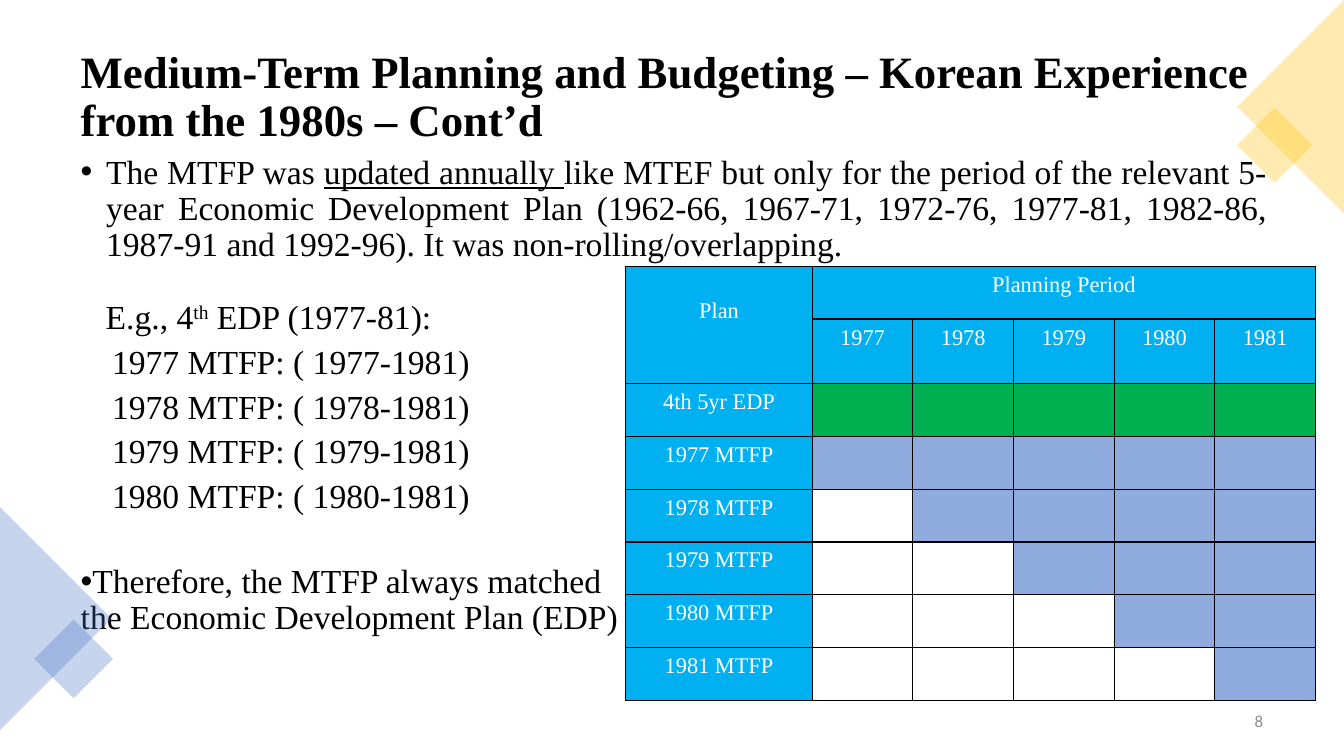
from dataclasses import dataclass

from lxml.etree import SubElement
from pptx import Presentation
from pptx.dml.color import RGBColor
from pptx.enum.shapes import MSO_SHAPE
from pptx.enum.text import MSO_ANCHOR, MSO_AUTO_SIZE, PP_ALIGN
from pptx.oxml.ns import qn
from pptx.util import Cm, Pt

TRIANGLE, SQUARE = MSO_SHAPE.ISOSCELES_TRIANGLE, MSO_SHAPE.RECTANGLE
TOP, MIDDLE = MSO_ANCHOR.TOP, MSO_ANCHOR.MIDDLE
LEFT, CENTER, RIGHT, JUSTIFY = PP_ALIGN.LEFT, PP_ALIGN.CENTER, PP_ALIGN.RIGHT, PP_ALIGN.JUSTIFY
NO_AUTOFIT = MSO_AUTO_SIZE.NONE


@dataclass(frozen=True)
class Theme:
    serif: str = "Times New Roman"
    sans: str = "Calibri"
    ink: str = "000000"
    white: str = "FFFFFF"
    grey: str = "8C8C8C"
    header: str = "00B0F0"
    edp: str = "00B050"
    mtfp: str = "8FAADC"
    blue: str = "4472C4"
    gold: str = "FFC000"
    title: int = 32
    body: int = 24
    cell: int = 16
    number: int = 12


THEME = Theme()
YEARS = [str(year) for year in range(1977, 1982)]


def rgb(value):
    return RGBColor.from_string(value)


def place(sp, box):
    sp.left, sp.top, sp.width, sp.height = (Cm(v) for v in box)


def add_run(p, text, size, color, font=THEME.serif):
    r = p.add_run()
    r.text = text
    r.font.name = font
    r.font.size = Pt(size)
    r.font.color.rgb = rgb(color)
    return r


def add_title(s, box, text):
    sp = s.shapes.title
    place(sp, box)
    tf = sp.text_frame
    tf.auto_size = NO_AUTOFIT
    tf.vertical_anchor = MIDDLE
    p = tf.paragraphs[0]
    p.alignment = LEFT
    p.line_spacing = 0.9
    add_run(p, text, THEME.title, THEME.ink).font.bold = True


def add_body_paragraph(tf, first, runs, before, margin, indent, bullet):
    p = tf.paragraphs[0] if first else tf.add_paragraph()
    p.alignment = JUSTIFY
    p.line_spacing = 0.9
    p.space_before = Pt(before)
    pPr = p._p.get_or_add_pPr()
    pPr.set("marL", str(Cm(margin)))
    pPr.set("indent", str(Cm(indent)))
    if bullet:
        SubElement(pPr, qn("a:buFont")).set("typeface", "Arial")
        SubElement(pPr, qn("a:buChar")).set("char", "•")
    else:
        SubElement(pPr, qn("a:buNone"))
    for text, style in runs:
        r = add_run(p, text, THEME.body, THEME.ink)
        if style == "underline":
            r.font.underline = True
        elif style == "superscript":
            r._r.get_or_add_rPr().set("baseline", "30000")


def add_body(s, box):
    sp = s.placeholders[1]
    place(sp, box)
    tf = sp.text_frame
    tf.auto_size = NO_AUTOFIT
    tf.vertical_anchor = TOP
    update = [
        ("The MTFP was ", None),
        ("updated annually ", "underline"),
        ("like MTEF but only for the period of the relevant 5-year Economic Development Plan "
         "(1962-66, 1967-71, 1972-76, 1977-81, 1982-86, 1987-91 and 1992-96). "
         "It was non-rolling/overlapping.", None),
    ]
    example = [("E.g., 4", None), ("th", "superscript"), (" EDP (1977-81):", None)]
    paragraphs = [(update, 10, 0.64, -0.64, True), (example, 26.4, 1.09, -0.46, False)]
    for year in YEARS[:-1]:
        paragraphs.append(([(f"{year} MTFP: ( {year}-1981)", None)], 6, 1.45, -0.66, False))
    paragraphs.append(([("Therefore, the MTFP always matched ", None)], 34.8, 0, 0, True))
    paragraphs.append(([("the Economic Development Plan (EDP)", None)], 0, 0, 0, False))
    for i, (runs, before, margin, indent, bullet) in enumerate(paragraphs):
        add_body_paragraph(tf, i == 0, runs, before, margin, indent, bullet)


def add_corner_accent(s, box, color, points_right):
    left, top, width, height = box
    side = height / 4
    square_x = left + width * (0.66 if points_right else 0.35)
    square_y = top + height * 0.68
    parts = [
        (TRIANGLE, left + width / 2, top + height / 2, height, width, 90 if points_right else 270),
        (SQUARE, square_x, square_y, side, side, 45),
    ]
    group = s.shapes.add_group_shape()
    for kind, x, y, w, h, angle in parts:
        sp = group.shapes.add_shape(kind, Cm(x - w / 2), Cm(y - h / 2), Cm(w), Cm(h))
        sp.rotation = angle
        sp.shadow.inherit = False
        sp.line.fill.background()
        sp.fill.solid()
        sp.fill.fore_color.rgb = rgb(color)
        clr = sp._element.spPr.find(qn("a:solidFill")).find(qn("a:srgbClr"))
        SubElement(clr, qn("a:alpha")).set("val", "30000")


def add_page_number(s, box, number):
    sp = s.shapes.add_textbox(*(Cm(v) for v in box))
    tf = sp.text_frame
    tf.word_wrap = True
    tf.vertical_anchor = MIDDLE
    p = tf.paragraphs[0]
    p.alignment = RIGHT
    add_run(p, number, THEME.number, THEME.grey, THEME.sans)


def format_cell(cell, color):
    cell.fill.solid()
    cell.fill.fore_color.rgb = rgb(color)
    cell.margin_left = cell.margin_right = Cm(0.33)
    cell.margin_top = cell.margin_bottom = Cm(0.15)
    tcPr = cell._tc.get_or_add_tcPr()
    for i, edge in enumerate(("a:lnL", "a:lnR", "a:lnT", "a:lnB")):
        ln = SubElement(tcPr, qn(edge))
        ln.set("w", str(Pt(1)))
        SubElement(SubElement(ln, qn("a:solidFill")), qn("a:srgbClr")).set("val", THEME.ink)
        tcPr.insert(i, ln)


def plan_color(row, col):
    if row < 2 or col == 0:
        return THEME.header
    if row == 2:
        return THEME.edp
    return THEME.mtfp if col >= row - 2 else THEME.white


def add_plan_table(s, box):
    labels = {(0, 0): "Plan", (0, 1): "Planning Period", (2, 0): "4th 5yr EDP"}
    for i, year in enumerate(YEARS):
        labels[1, i + 1] = year
        labels[i + 3, 0] = f"{year} MTFP"
    table = s.shapes.add_table(8, 6, *(Cm(v) for v in box)).table
    table.first_row = table.horz_banding = False
    for i, column in enumerate(table.columns):
        column.width = Cm(4.7 if i == 0 else (box[2] - 4.7) / 5)
    for i, row in enumerate(table.rows):
        row.height = Cm(1.57 if i == 1 else (box[3] - 1.57) / 7)
    for row in range(8):
        for col in range(6):
            cell = table.cell(row, col)
            format_cell(cell, plan_color(row, col))
            if (row, col) in labels:
                p = cell.text_frame.paragraphs[0]
                p.alignment = CENTER
                add_run(p, labels[row, col], THEME.cell, THEME.white)
    table.cell(0, 0).merge(table.cell(1, 0))
    table.cell(0, 1).merge(table.cell(0, 5))
    table.cell(0, 0).margin_top = Cm(0.8)


def main():
    prs = Presentation()
    prs.slide_width, prs.slide_height = Cm(33.87), Cm(19.05)
    s = prs.slides.add_slide(prs.slide_layouts[1])
    add_title(s, (1.78, 0.89, 30.3, 3.15),
              "Medium-Term Planning and Budgeting – Korean Experience from the 1980s – Cont’d")
    add_body(s, (1.78, 3.78, 30.4, 13.39))
    add_corner_accent(s, (0, 12.78, 2.81, 5.62), THEME.blue, True)
    add_corner_accent(s, (31.18, 0, 2.69, 5.38), THEME.gold, False)
    add_page_number(s, (24.46, 17.65, 7.62, 1.02), "8")
    add_plan_table(s, (15.77, 6.71, 17.38, 10.88))
    prs.save("out.pptx")


if __name__ == "__main__":
    main()
